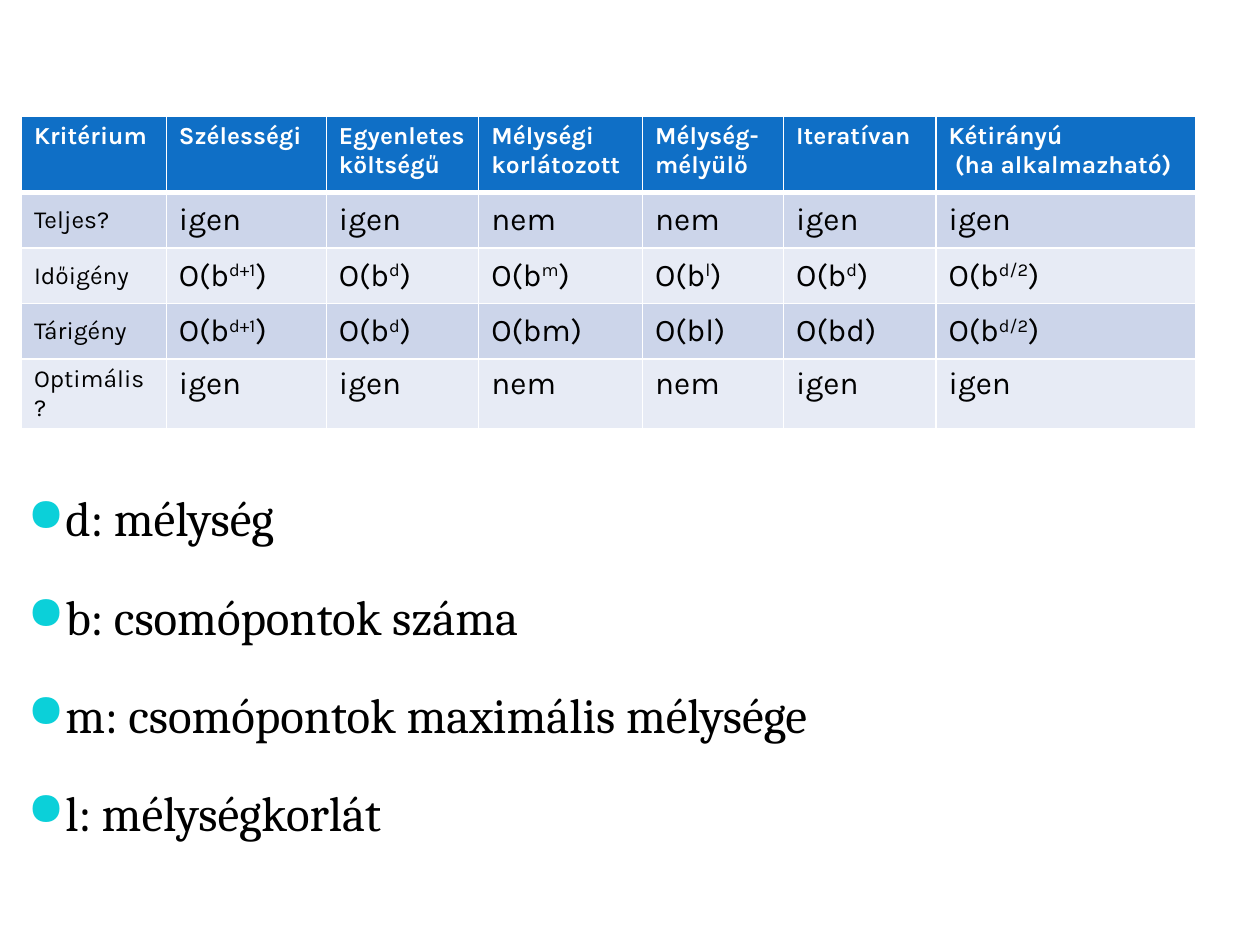
from lxml.etree import SubElement
from pptx import Presentation
from pptx.dml.color import RGBColor
from pptx.enum.text import MSO_ANCHOR
from pptx.oxml.ns import qn
from pptx.util import Inches, Pt

# Content: "|" switches superscript on and off, a line break starts a paragraph
HEADINGS = ["Kritérium", "Szélességi", "Egyenletes költségű", "Mélységi korlátozott",
            "Mélység-mélyülő", "Iteratívan", "Kétirányú\n (ha alkalmazható)"]
CRITERIA = [
    ["Teljes?", "igen", "igen", "nem", "nem", "igen", "igen"],
    ["Időigény", "O(b|d+1|)", "O(b|d|)", "O(b|m|)", "O(b|l|)", "O(b|d|)", "O(b|d/2|)"],
    ["Tárigény", "O(b|d+1|)", "O(b|d|)", "O(bm)", "O(bl)", "O(bd)", "O(b|d/2|)"],
    ["Optimális?", "igen", "igen", "nem", "nem", "igen", "igen"],
]
LEGEND = ["d: mélység", "b: csomópontok száma",
          "m: csomópontok maximális mélysége", "l: mélységkorlát"]

COLUMN_WIDTHS = [1.15, 1.27, 1.21, 1.3, 1.12, 1.21, 2.06]
ROW_HEIGHTS = [0.61] + [0.44] * len(CRITERIA)
HEADER_FILL, BAND_FILLS = "0F6FC6", ["CCD5EA", "E7EBF5"]
WHITE, BLACK, BULLET = "FFFFFF", "000000", "0BD0D9"


def rgb(value):
    return RGBColor.from_string(value)


def add_run(paragraph, text, font, size, color, bold=False):
    run = paragraph.add_run()
    run.text = text
    run.font.name, run.font.size, run.font.bold = font, Pt(size), bold
    run.font.color.rgb = rgb(color)
    return run


def add_child(parent, tag, **attributes):
    return SubElement(parent, qn(tag), attributes)


def set_borders(cell, bottom):
    properties = cell._tc.get_or_add_tcPr()
    for side, width in (("L", 1), ("R", 1), ("T", 1), ("B", bottom)):
        line = add_child(properties, f"a:ln{side}", w=str(Pt(width)))
        add_child(add_child(line, "a:solidFill"), "a:srgbClr", val=WHITE)


def write_cell(cell, text, size, color, bold):
    for index, line in enumerate(text.split("\n")):
        frame = cell.text_frame
        paragraph = frame.add_paragraph() if index else frame.paragraphs[0]
        for part, piece in enumerate(line.split("|")):
            run = add_run(paragraph, piece, "Karla", size, color, bold)
            if part % 2:
                run._r.get_or_add_rPr().set("baseline", "30000")


def add_comparison(slide):
    rows = [HEADINGS] + CRITERIA
    table = slide.shapes.add_table(
        len(rows), len(HEADINGS), Inches(0.17), Inches(0.92),
        Inches(sum(COLUMN_WIDTHS)), Inches(sum(ROW_HEIGHTS))).table
    for column, width in zip(table.columns, COLUMN_WIDTHS):
        column.width = Inches(width)
    for r, (texts, height) in enumerate(zip(rows, ROW_HEIGHTS)):
        table.rows[r].height = Inches(height)
        header = r == 0
        for c, text in enumerate(texts):
            cell = table.cell(r, c)
            set_borders(cell, 3 if header else 1)
            cell.fill.solid()
            cell.fill.fore_color.rgb = rgb(HEADER_FILL if header else BAND_FILLS[(r - 1) % 2])
            if 0 < r < len(CRITERIA):
                cell.vertical_anchor = MSO_ANCHOR.MIDDLE
            write_cell(cell, text, 14 if header or c == 0 else 18,
                       WHITE if header else BLACK, header)


def add_legend(slide):
    frame = slide.shapes.add_textbox(
        Inches(0.12), Inches(3.59), Inches(9.88), Inches(3.31)).text_frame
    frame.word_wrap = True
    for index, entry in enumerate(LEGEND):
        paragraph = frame.add_paragraph() if index else frame.paragraphs[0]
        paragraph.line_spacing = 1.5
        paragraph.space_before = Pt(5.6)
        properties = paragraph._p.get_or_add_pPr()
        properties.set("marL", str(Inches(0.3)))
        properties.set("indent", str(-Inches(0.3)))
        add_child(add_child(properties, "a:buClr"), "a:srgbClr", val=BULLET)
        add_child(properties, "a:buSzPct", val="95000")
        add_child(properties, "a:buChar", char="●")
        add_run(paragraph, entry, "Cambria", 28, BLACK)


def main():
    deck = Presentation()
    deck.slide_width, deck.slide_height = Inches(10), Inches(7.5)
    slide = deck.slides.add_slide(deck.slide_layouts[6])
    add_comparison(slide)
    add_legend(slide)
    deck.save("out.pptx")


if __name__ == "__main__":
    main()
